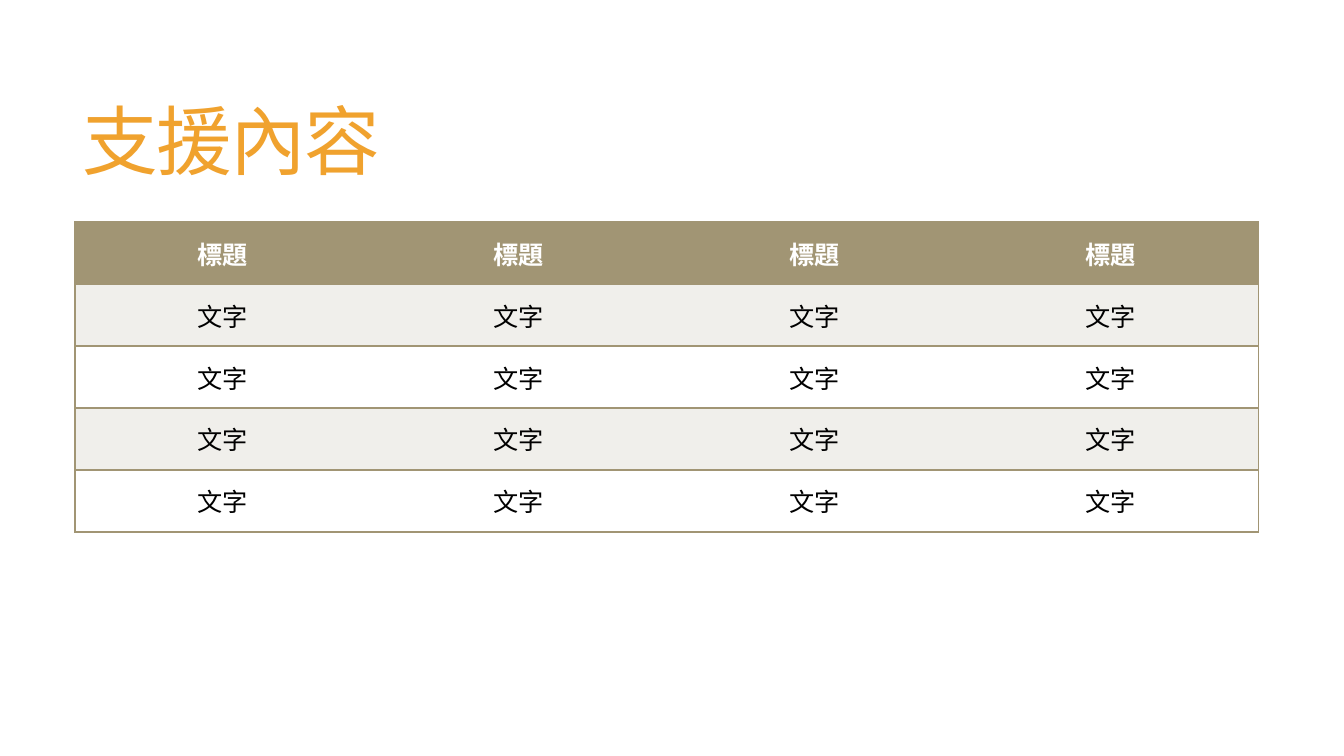
from lxml import etree
from pptx import Presentation
from pptx.dml.color import RGBColor
from pptx.enum.text import MSO_ANCHOR, PP_ALIGN
from pptx.oxml.ns import qn
from pptx.util import Pt

MIDDLE = MSO_ANCHOR.MIDDLE
LEFT, CENTER = PP_ALIGN.LEFT, PP_ALIGN.CENTER

TITLE = "支援內容"
ROWS = [["標題"] * 4] + [["文字"] * 4] * 4

FONT = "Noto Sans CJK TC"
ACCENT = "A19574"
BANDS = ["F0EFEB", "FFFFFF"]
PLAIN_STYLE = "{2D5ABB26-0587-4C30-8999-92F81FD0307C}"
TITLE_FORMAT = {"size": Pt(54), "bold": False, "name": FONT}
HEADER_FORMAT = {"size": Pt(18), "bold": True, "name": FONT}
BODY_FORMAT = {"size": Pt(18), "bold": False, "name": FONT}

SLIDE_W, SLIDE_H = 1344, 756
TITLE_BOX = (73, 55, 1187, 182)
TABLE_LEFT, TABLE_TOP = 75, 222
COLUMN_W, ROW_H = 296, 62
EMU_PER_PX = 914400 / 100.8


def px(length):
    return round(length * EMU_PER_PX)


def color(value):
    return RGBColor.from_string(value)


def write(frame, text, font_format, text_color, align):
    frame.word_wrap = True
    paragraph = frame.paragraphs[0]
    paragraph.alignment = align
    run = paragraph.add_run()
    run.text = text
    for key, value in font_format.items():
        setattr(run.font, key, value)
    run.font.color.rgb = color(text_color)
    properties = run.font._element
    etree.SubElement(properties, qn("a:ea"), typeface=FONT)
    return paragraph, properties


def draw_borders(cell, sides):
    properties = cell._tc.get_or_add_tcPr()
    for side in sides:
        line = etree.SubElement(properties, qn(f"a:ln{side}"), w=str(Pt(1)))
        fill = etree.SubElement(line, qn("a:solidFill"))
        etree.SubElement(fill, qn("a:srgbClr"), val=ACCENT)


def add_title(slide):
    frame = slide.shapes.add_textbox(*map(px, TITLE_BOX)).text_frame
    frame.vertical_anchor = MIDDLE
    paragraph, properties = write(frame, TITLE, TITLE_FORMAT, "F0A22E", LEFT)
    paragraph.line_spacing = 0.85
    properties.set("spc", "-120")


def add_support_table(slide):
    row_count, column_count = len(ROWS), len(ROWS[0])
    table = slide.shapes.add_table(
        row_count, column_count, px(TABLE_LEFT), px(TABLE_TOP),
        px(COLUMN_W * column_count), px(ROW_H * row_count)).table
    table.first_row = table.horz_banding = False
    table._tbl.tblPr.find(qn("a:tableStyleId")).text = PLAIN_STYLE
    for column in table.columns:
        column.width = px(COLUMN_W)
    for r, texts in enumerate(ROWS):
        table.rows[r].height = px(ROW_H)
        fill = BANDS[(r - 1) % 2] if r else ACCENT
        font_format, text_color = (BODY_FORMAT, "000000") if r else (HEADER_FORMAT, "FFFFFF")
        for c, text in enumerate(texts):
            cell = table.cell(r, c)
            left = "L" if c == 0 else ""
            right = "R" if c == column_count - 1 else ""
            draw_borders(cell, left + right + "TB")
            cell.fill.solid()
            cell.fill.fore_color.rgb = color(fill)
            cell.vertical_anchor = MIDDLE
            write(cell.text_frame, text, font_format, text_color, CENTER)


def main():
    deck = Presentation()
    deck.slide_width, deck.slide_height = px(SLIDE_W), px(SLIDE_H)
    slide = deck.slides.add_slide(deck.slide_layouts[6])
    add_title(slide)
    add_support_table(slide)
    deck.save("out.pptx")


if __name__ == "__main__":
    main()
